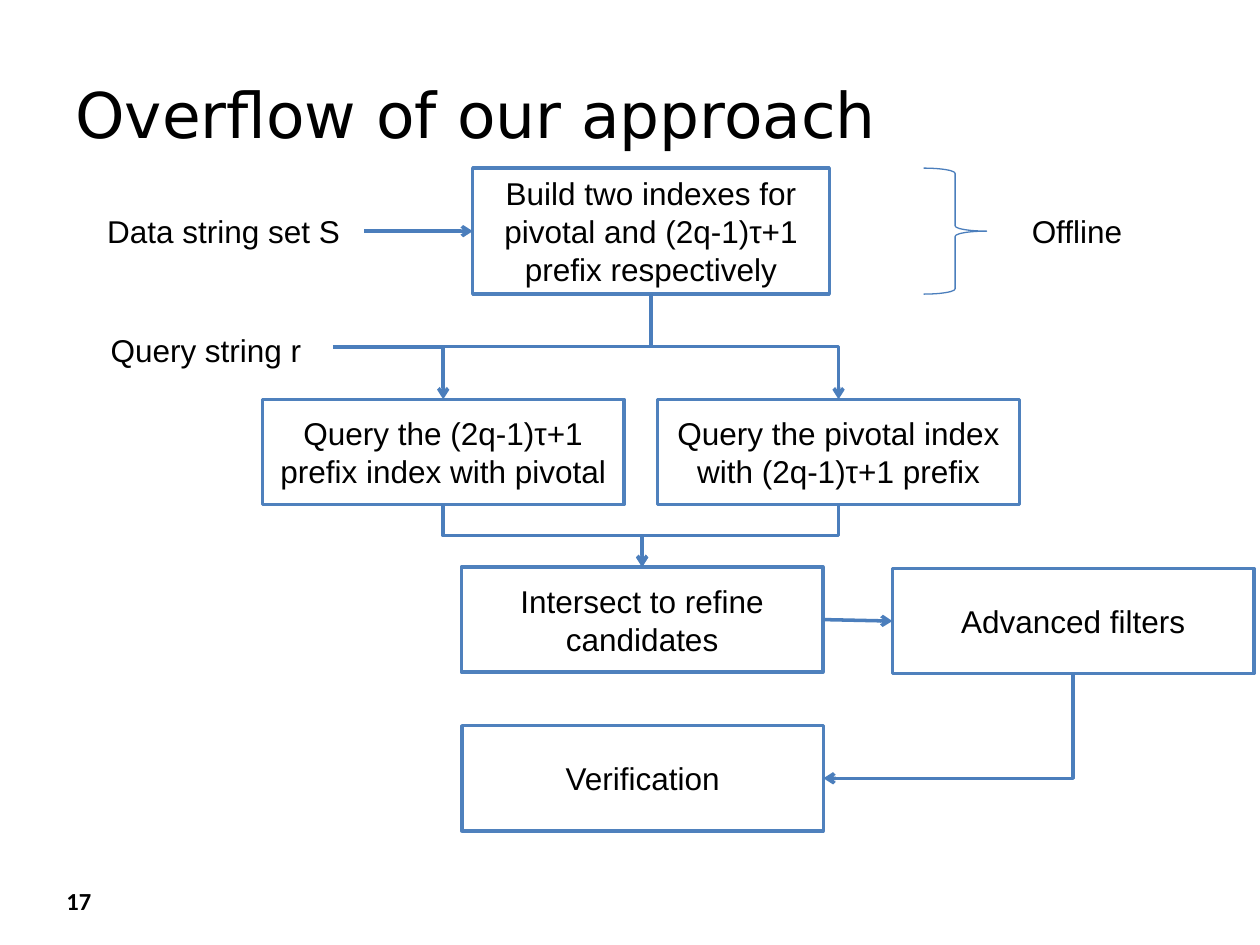
"""Build the slide that shows the steps of a string search approach."""
from dataclasses import dataclass

import pptx
import pptx.dml.color
import pptx.enum.shapes
import pptx.enum.text
import pptx.oxml
import pptx.oxml.ns
import pptx.util

Cm, Pt = pptx.util.Cm, pptx.util.Pt
Color = pptx.dml.color.RGBColor.from_string
Kind = pptx.enum.shapes.MSO_SHAPE
Link = pptx.enum.shapes.MSO_CONNECTOR
Align = pptx.enum.text.PP_ALIGN
Anchor = pptx.enum.text.MSO_ANCHOR


@dataclass(frozen=True)
class Theme:
    ink: str = "000000"
    paper: str = "FFFFFF"
    edge: str = "4F81BD"
    wire: str = "4B7EBC"
    thick: float = 2
    thin: float = 0.75
    title: tuple = ("DejaVu Sans", 36, False)
    body: tuple = ("Arial", 18, False)
    number: tuple = ("Calibri", 14, True)


THEME = Theme()
WIDE, TALL = 7.29, 2.12
STEPS = {
    "build": ("Build two indexes for pivotal and (2q-1)τ+1 prefix respectively",
              9.53, 3.39, 7.19, 2.54),
    "prefix": ("Query the (2q-1)τ+1 prefix index with pivotal", 5.29, 8.05, WIDE, TALL),
    "pivot": ("Query the pivotal index with (2q-1)τ+1 prefix", 13.26, 8.05, WIDE, TALL),
    "refine": ("Intersect to refine candidates", 9.3, 11.43, WIDE, TALL),
    "filter": ("Advanced filters", 17.99, 11.46, WIDE, TALL),
    "verify": ("Verification", 9.31, 14.63, WIDE, TALL),
}
LABELS = [
    ("Data string set S", 1.91, 4.14, 5.43, 1.02, THEME.body),
    ("Offline", 20.55, 4.14, 2.54, 1.02, THEME.body),
    ("Query string r", 1.98, 6.55, 4.57, 1.02, THEME.body),
    ("17", 1.09, 17.73, 1.2, 0.86, THEME.number),
]
TITLE = ("Overflow of our approach", 1.27, 1.32, 22.86, 2.21, THEME.title)
BRACE = (18.62, 3.39, 1.27, 2.54)
FORKS = [("build", "prefix"), ("build", "pivot"), ("prefix", "refine"), ("pivot", "refine")]
DATA, QUERY = 7.34, 6.71


def put(item, **values):
    for name, value in values.items():
        setattr(item, name, value)


def write(shape, text, face, frame, align):
    put(shape.text_frame, **frame)
    para = shape.text_frame.paragraphs[0]
    para.alignment = align
    run = para.add_run()
    run.text = text
    name, size, bold = face
    put(run.font, name=name, size=Pt(size), bold=bold)
    run.font.color.rgb = Color(THEME.ink)


def stroke(item, color, width):
    item.line.color.rgb = Color(color)
    item.line.width = Pt(width)


def label(slide, text, x, y, w, h, face, **frame):
    box = slide.shapes.add_textbox(Cm(x), Cm(y), Cm(w), Cm(h))
    write(box, text, face, frame, Align.LEFT)


def step(slide, text, x, y, w, h):
    box = slide.shapes.add_shape(Kind.RECTANGLE, Cm(x), Cm(y), Cm(w), Cm(h))
    box.shadow.inherit = False
    box.fill.solid()
    box.fill.fore_color.rgb = Color(THEME.paper)
    stroke(box, THEME.edge, THEME.thick)
    write(box, text, THEME.body,
          {"word_wrap": True, "vertical_anchor": Anchor.MIDDLE}, Align.CENTER)


def wire(slide, start, end, kind=Link.STRAIGHT, arrow=True):
    ends = [Cm(value) for value in (*start, *end)]
    line = slide.shapes.add_connector(kind, *ends)
    stroke(line, THEME.wire, THEME.thick)
    if arrow:
        tip = pptx.oxml.parse_xml(
            f'<a:tailEnd {pptx.oxml.ns.nsdecls("a")} type="arrow"/>')
        line.line._get_or_add_ln().append(tip)
    line._element.spPr.append(
        pptx.oxml.parse_xml(f'<a:effectLst {pptx.oxml.ns.nsdecls("a")}/>'))
    return line


def bend(slide, start, end, preset="bentConnector3"):
    (ax, ay), (bx, by) = start, end
    mx, my = (ax + bx) / 2, (ay + by) / 2
    dx, dy = abs(bx - ax) / 2, abs(by - ay) / 2
    line = wire(slide, (mx - dy, my - dx), (mx + dy, my + dx), Link.ELBOW)
    shape = line._element.spPr
    shape.find(pptx.oxml.ns.qn("a:prstGeom")).set("prst", preset)
    turn = {"rot": "5400000"} if bx < ax else {"rot": "16200000", "flipH": "1"}
    for name, value in turn.items():
        shape.xfrm.set(name, value)


def side(name, across, down):
    x, y, w, h = STEPS[name][1:]
    return x + w * across, y + h * down


def main():
    deck = pptx.Presentation()
    put(deck, slide_width=Cm(25.4), slide_height=Cm(19.05))
    slide = deck.slides.add_slide(deck.slide_layouts[6])

    label(slide, *TITLE, word_wrap=True, vertical_anchor=Anchor.MIDDLE,
          margin_bottom=Cm(0.4))
    for item in LABELS:
        label(slide, *item, word_wrap=False)
    for item in STEPS.values():
        step(slide, *item)

    brace = slide.shapes.add_shape(Kind.RIGHT_BRACE, *[Cm(value) for value in BRACE])
    brace.shadow.inherit = False
    brace.fill.background()
    stroke(brace, THEME.wire, THEME.thin)

    for head, tail in FORKS:
        bend(slide, side(head, 0.5, 1), side(tail, 0.5, 0))
    bend(slide, side("filter", 0.5, 1), side("verify", 1, 0.5), "bentConnector2")

    entry = side("build", 0, 0.5)
    wire(slide, (DATA, entry[1]), entry)
    wire(slide, side("refine", 1, 0.5), side("filter", 0, 0.5))
    join, top = side("prefix", 0.5, 0)
    level = (side("build", 0.5, 1)[1] + top) / 2
    wire(slide, (QUERY, level), (join, level), arrow=False)

    deck.save("out.pptx")


if __name__ == "__main__":
    main()
